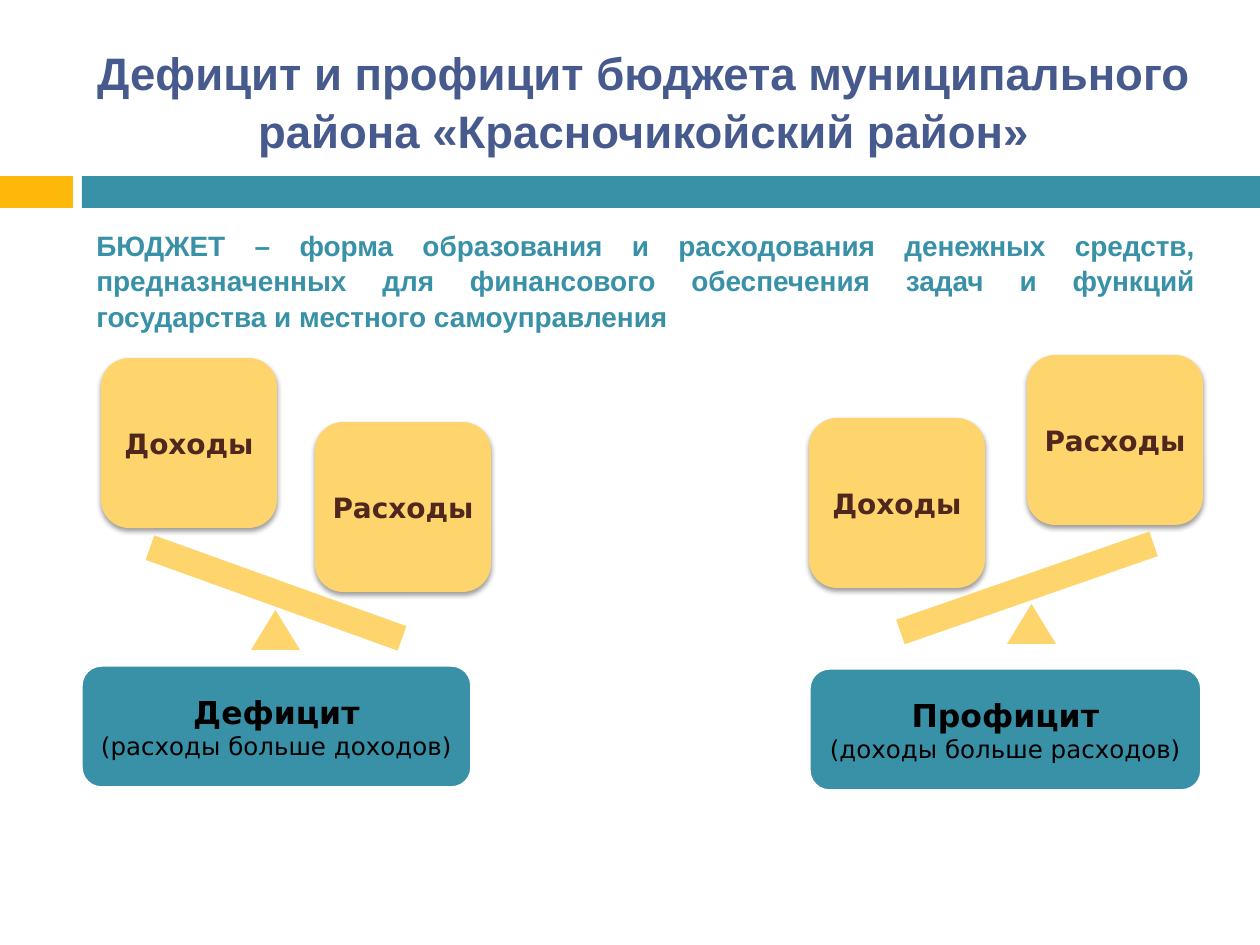
from dataclasses import dataclass

from lxml import etree
from pptx import Presentation, util as u
from pptx.dml.color import RGBColor
from pptx.enum import shapes, text
from pptx.oxml.ns import qn

PX = 914400 / 126


@dataclass(frozen=True)
class Theme:
    heading: str = "475A8D"
    teal: str = "3891A7"
    amber: str = "FEB80A"
    sand: str = "FED46C"
    brown: str = "4F271C"
    black: str = "000000"
    white: str = "FFFFFF"
    body_font: str = "Arial"
    scale_font: str = "DejaVu Sans"
    title_size: int = 26
    body_size: int = 16
    block_size: int = 16
    label_size: int = 18
    note_size: int = 14
    spacing: float = 1.05


T = Theme()


@dataclass(frozen=True)
class Balance:
    """Part positions in px, relative to the box of one balance."""
    income: tuple
    expense: tuple
    beam: tuple
    tilt: float
    pivot: tuple
    label: tuple
    name: str
    note: str


DEFICIT = Balance((20, 0), (234, 64), (61, 222), 19.8, (170, 252),
                  (0, 307), "Дефицит", "(расходы больше доходов)")
SURPLUS = Balance((0, 63), (218, 0), (84, 220), -19.2, (198, 249),
                  (0, 313), "Профицит", "(доходы больше расходов)")


def px(n):
    return u.Emu(round(n * PX))


def rgb(value):
    return RGBColor.from_string(value)


def add_box(parent, kind, x, y, w, h, fill):
    sp = parent.shapes.add_shape(kind, px(x), px(y), px(w), px(h))
    sp.shadow.inherit = False
    sp.fill.solid()
    sp.fill.fore_color.rgb = rgb(fill)
    sp.line.fill.background()
    return sp


def add_shadow(sp):
    effects = sp._element.spPr.find(qn("a:effectLst"))
    shadow = etree.SubElement(effects, qn("a:outerShdw"), blurRad="39000",
                              dist="20000", dir="5400000", rotWithShape="0")
    color = etree.SubElement(shadow, qn("a:srgbClr"), val=T.black)
    etree.SubElement(color, qn("a:alpha"), val="38000")


def format_paragraph(p, size, color, font, bold=True,
                     align=text.PP_ALIGN.CENTER):
    p.alignment = align
    for r in p.runs:
        r.font.size = u.Pt(size)
        r.font.name = font
        r.font.bold = bold
        r.font.color.rgb = rgb(color)


def prepare_frame(sp, anchor=text.MSO_ANCHOR.MIDDLE, side=None):
    tf = sp.text_frame
    tf.word_wrap = True
    tf.auto_size = text.MSO_AUTO_SIZE.NONE
    tf.vertical_anchor = anchor
    if side is not None:
        tf.margin_left = tf.margin_right = px(side)
    return tf


def add_title(s, x, y, w, h):
    sp = s.shapes.title
    sp.left, sp.top, sp.width, sp.height = px(x), px(y), px(w), px(h)
    tf = prepare_frame(sp)
    tf.text = ("Дефицит и профицит бюджета муниципального "
               "района «Красночикойский район»")
    p = tf.paragraphs[0]
    p.line_spacing = T.spacing
    format_paragraph(p, T.title_size, T.heading, T.body_font)


def add_band(s, x, y, w, h):
    rect = shapes.MSO_SHAPE.RECTANGLE
    tab, gap = 73, 9
    add_box(s, rect, x, y, tab, h, T.amber)
    add_box(s, rect, x + tab + gap, y, w - tab - gap, h, T.teal)


def add_definition(s, x, y, w, h):
    sp = s.shapes.add_textbox(px(x), px(y), px(w), px(h))
    tf = prepare_frame(sp, text.MSO_ANCHOR.TOP)
    tf.text = ("БЮДЖЕТ – форма образования и расходования денежных средств, "
               "предназначенных для финансового обеспечения задач и функций "
               "государства и местного самоуправления")
    p = tf.paragraphs[0]
    p.line_spacing = T.spacing
    format_paragraph(p, T.body_size, T.teal, T.body_font,
                     align=text.PP_ALIGN.JUSTIFY)


def add_balance(s, x, y, w, b):
    """Place two weights on a tilted beam, with a label w px wide below."""
    kinds = shapes.MSO_SHAPE
    group = s.shapes.add_group_shape()
    for word, (dx, dy) in (("Доходы", b.income), ("Расходы", b.expense)):
        sp = add_box(group, kinds.ROUNDED_RECTANGLE, x + dx, y + dy,
                     176, 170, T.sand)
        add_shadow(sp)
        tf = prepare_frame(sp, side=5)
        tf.text = word
        format_paragraph(tf.paragraphs[0], T.block_size, T.brown, T.scale_font)

    beam = add_box(group, kinds.RECTANGLE, x + b.beam[0], y + b.beam[1],
                   268, 26, T.sand)
    beam.rotation = b.tilt
    add_box(group, kinds.ISOSCELES_TRIANGLE, x + b.pivot[0], y + b.pivot[1],
            49, 40, T.sand)

    label = add_box(s, kinds.ROUNDED_RECTANGLE, x + b.label[0], y + b.label[1],
                    w, 123, T.teal)
    label.line.color.rgb = rgb(T.white)
    label.line.width = u.Pt(2)
    tf = prepare_frame(label, side=5)
    tf.text = f"{b.name}\n{b.note}"
    name, note = tf.paragraphs
    format_paragraph(name, T.label_size, T.black, T.scale_font)
    format_paragraph(note, T.note_size, T.black, T.scale_font, bold=False)


def main():
    prs = Presentation()
    prs.slide_width, prs.slide_height = px(1260), px(945)
    s = prs.slides.add_slide(prs.slide_layouts[5])
    add_band(s, 0, 176, 1260, 32)
    add_title(s, 81, 32, 1126, 136)
    add_definition(s, 84, 221, 1124, 620)
    add_balance(s, 81, 358, 391, DEFICIT)
    add_balance(s, 809, 355, 393, SURPLUS)
    prs.save("out.pptx")


if __name__ == "__main__":
    main()
